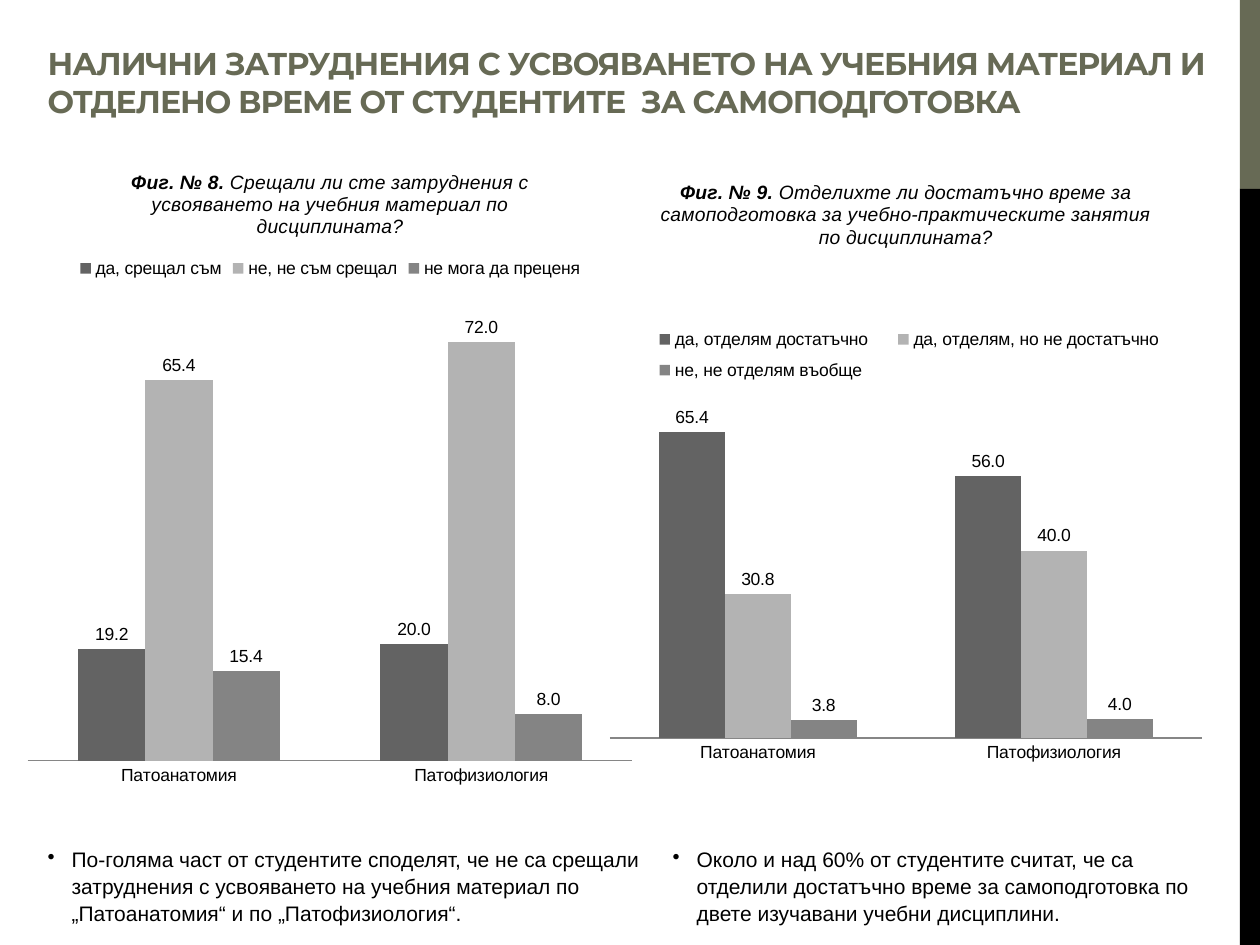
from lxml import etree
from pptx import Presentation
from pptx.chart.data import CategoryChartData
from pptx.dml.color import RGBColor
from pptx.enum.chart import XL_CHART_TYPE, XL_LABEL_POSITION, XL_LEGEND_POSITION, XL_TICK_MARK
from pptx.enum.shapes import MSO_SHAPE
from pptx.enum.text import MSO_ANCHOR
from pptx.oxml import parse_xml
from pptx.oxml.ns import nsdecls, qn
from pptx.util import Inches, Pt

COLUMNS = XL_CHART_TYPE.COLUMN_CLUSTERED
LABEL_ABOVE = XL_LABEL_POSITION.OUTSIDE_END
LEGEND_TOP = XL_LEGEND_POSITION.TOP
NO_TICKS = XL_TICK_MARK.NONE
RECTANGLE = MSO_SHAPE.RECTANGLE
TOP, BOTTOM = MSO_ANCHOR.TOP, MSO_ANCHOR.BOTTOM

OLIVE = RGBColor(0x67, 0x6A, 0x55)
BLACK = RGBColor(0, 0, 0)
AXIS_GRAY = RGBColor(0x86, 0x86, 0x86)
SERIES_COLORS = [RGBColor(0x63, 0x63, 0x63), RGBColor(0xB3, 0xB3, 0xB3), RGBColor(0x84, 0x84, 0x84)]


def add_text(left, top, width, height, anchor, text, size, font_name, color):
    """Add a wrapped text box with one run; return its paragraph and run."""
    box = slide.shapes.add_textbox(Inches(left), Inches(top), Inches(width), Inches(height))
    frame = box.text_frame
    frame.word_wrap = True
    frame.vertical_anchor = anchor
    paragraph = frame.paragraphs[0]
    run = paragraph.add_run()
    run.text = text
    run.font.size = Pt(size)
    run.font.name = font_name
    run.font.color.rgb = color
    return paragraph, run


def make_layout(box, inner=False):
    """Build a manual chart layout from fractions x, y, w, h."""
    target = '<c:layoutTarget val="inner"/>' if inner else ""
    modes = '<c:xMode val="edge"/><c:yMode val="edge"/>'
    values = "".join(f'<c:{name} val="{value}"/>' for name, value in zip("xywh", box))
    return parse_xml(f'<c:layout {nsdecls("c")}><c:manualLayout>{target}{modes}{values}'
                     "</c:manualLayout></c:layout>")


presentation = Presentation()
presentation.slide_width = Inches(10)
presentation.slide_height = Inches(7.5)
slide = presentation.slides.add_slide(presentation.slide_layouts[6])

# Side bar
for top, height, color in [(0, 1.5, OLIVE), (1.5, 6, BLACK)]:
    bar = slide.shapes.add_shape(RECTANGLE, Inches(9.84), Inches(top), Inches(0.16), Inches(height))
    bar.shadow.inherit = False
    bar.fill.solid()
    bar.fill.fore_color.rgb = color
    bar.line.fill.background()

# Title
paragraph, run = add_text(
    0.28, 0.21, 9.45, 0.79, BOTTOM,
    "НАЛИЧНИ ЗАТРУДНЕНИЯ С УСВОЯВАНЕТО НА УЧЕБНИЯ МАТЕРИАЛ И "
    "ОТДЕЛЕНО ВРЕМЕ ОТ СТУДЕНТИТЕ  ЗА САМОПОДГОТОВКА",
    18, "Montserrat", OLIVE)
run.font.bold = True
run.font._element.set("spc", "-60")

# Conclusions under the charts
conclusions = [
    (0.28, 5.35, "По-голяма част от студентите споделят, че не са срещали затруднения с "
                 "усвояването на учебния материал по „Патоанатомия“ и по „Патофизиология“."),
    (5.24, 4.58, "Около и над 60% от студентите считат, че са отделили достатъчно време за "
                 "самоподготовка по двете изучавани учебни дисциплини."),
]
for left, width, text in conclusions:
    paragraph, run = add_text(left, 6.66, width, 0.71, TOP, text, 12, "Arial", BLACK)
    paragraph.line_spacing = 1.06
    paragraph.space_after = Pt(10)
    properties = paragraph._p.get_or_add_pPr()
    properties.set("marL", str(Inches(0.19)))
    properties.set("indent", str(-Inches(0.19)))
    etree.SubElement(properties, qn("a:buChar")).set("char", "•")

# Charts: place, title, series, axis maximum, plot and legend layout
charts = [
    (0.12, 1.15, "Фиг. № 8.",
     " Срещали ли сте затруднения с усвояването на учебния материал по дисциплината?",
     [("да, срещал съм", (19.2, 20)), ("не, не съм срещал", (65.4, 72)),
      ("не мога да преценя", (15.4, 8))],
     80, (0.02, 0.23, 0.96, 0.71), None),
    (4.69, 1.23, "Фиг. № 9.",
     " Отделихте ли достатъчно време за самоподготовка за учебно-практическите занятия "
     "по дисциплината?",
     [("да, отделям достатъчно", (65.4, 56)), ("да, отделям, но не достатъчно", (30.8, 40)),
      ("не, не отделям въобще", (3.8, 4))],
     70, (0.03, 0.39, 0.94, 0.5), (0.07, 0.25, 0.87, 0.11)),
]
for left, top, number, question, answers, maximum, plot_box, legend_box in charts:
    data = CategoryChartData(number_format="0.0")
    data.categories = ["Патоанатомия", "Патофизиология"]
    for name, values in answers:
        data.add_series(name, values)
    chart = slide.shapes.add_chart(
        COLUMNS, Inches(left), Inches(top), Inches(5), Inches(5.2), data).chart
    chart.font.name = "Arial"
    chart.font.size = Pt(10)
    chart.font.color.rgb = BLACK

    title = chart.chart_title
    title.include_in_layout = False
    paragraph = title.text_frame.paragraphs[0]
    for text, bold in [(number, True), (question, False)]:
        run = paragraph.add_run()
        run.text = text
        run.font.size = Pt(11)
        run.font.name = "Arial"
        run.font.bold = bold
        run.font.italic = True
        run.font.color.rgb = BLACK

    chart.has_legend = True
    legend = chart.legend
    legend.position = LEGEND_TOP
    legend.include_in_layout = False
    legend.font.size = Pt(10)
    if legend_box:
        legend._element.find(qn("c:legendPos")).addnext(make_layout(legend_box))

    value_axis = chart.value_axis
    value_axis.visible = False
    value_axis.has_major_gridlines = False
    value_axis.minimum_scale = 0
    value_axis.maximum_scale = maximum
    category_axis = chart.category_axis
    category_axis.major_tick_mark = NO_TICKS
    category_axis.format.line.color.rgb = AXIS_GRAY
    category_axis.tick_labels.font.size = Pt(10)

    plot = chart.plots[0]
    plot.gap_width = 150
    plot.overlap = 0
    plot.vary_by_categories = False
    for series, color in zip(plot.series, SERIES_COLORS):
        series.format.fill.solid()
        series.format.fill.fore_color.rgb = color
        labels = series.data_labels
        labels.show_value = True
        labels.number_format = "0.0"
        labels.number_format_is_linked = False
        labels.position = LABEL_ABOVE
        labels.font.size = Pt(10)

    plot_area = chart._chartSpace.chart.plotArea
    for layout in plot_area.findall(qn("c:layout")):
        plot_area.remove(layout)
    plot_area.insert(0, make_layout(plot_box, inner=True))

presentation.save("out.pptx")
